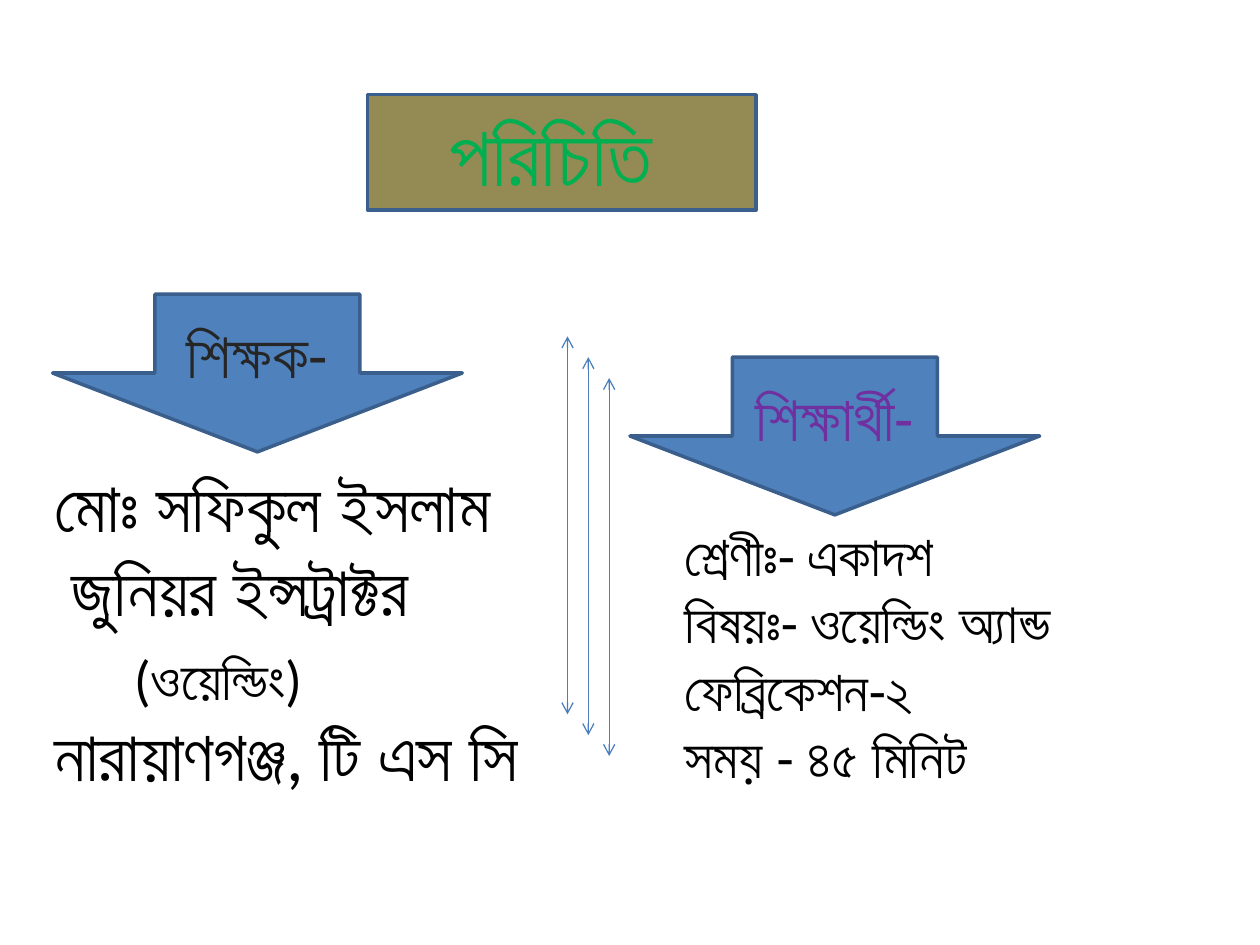
from lxml import etree
from pptx import Presentation
from pptx import util as u
from pptx.dml.color import RGBColor
from pptx.enum import shapes, text
from pptx.oxml.ns import qn

FONT = "Calibri"
OLIVE = RGBColor(0x94, 0x8A, 0x54)
BLUE = RGBColor(0x4F, 0x81, 0xBD)
OUTLINE = RGBColor(0x3A, 0x5F, 0x8C)
DIVIDER = RGBColor(0x4B, 0x7E, 0xBC)
GREEN = RGBColor(0x00, 0xB0, 0x50)
PURPLE = RGBColor(0x70, 0x30, 0xA0)
CHARCOAL = RGBColor(0x26, 0x26, 0x26)
BLACK = RGBColor(0, 0, 0)

# Bengali letter YYA: letter YA plus the nukta sign, and the single code point
YA_WITH_NUKTA = chr(0x09AF) + chr(0x09BC)
YYA = chr(0x09DF)


def cm_box(box):
    return [u.Cm(length) for length in box]


def add_words(paragraph, words, size, color):
    """Add words in one format, YYA as one code point; a newline breaks the line."""
    for index, line in enumerate(words.replace(YA_WITH_NUKTA, YYA).split("\n")):
        if index:
            paragraph.add_line_break()
        if not line:
            continue
        run = paragraph.add_run()
        run.text = line
        run.font.color.rgb = color
        for name, value in {"name": FONT, "size": u.Pt(size)}.items():
            setattr(run.font, name, value)


def add_banner(slide, box, kind, fill, words, size, color):
    banner = slide.shapes.add_shape(kind, *cm_box(box))
    banner.shadow.inherit = False
    banner.fill.solid()
    banner.fill.fore_color.rgb = fill
    banner.line.color.rgb = OUTLINE
    banner.line.width = u.Pt(2)
    frame = banner.text_frame
    frame.vertical_anchor = text.MSO_ANCHOR.MIDDLE
    frame.paragraphs[0].alignment = text.PP_ALIGN.CENTER
    add_words(frame.paragraphs[0], words, size, color)


def add_details(slide, box, paragraphs):
    """Each paragraph is a list of (words, size) parts."""
    frame = slide.shapes.add_textbox(*cm_box(box)).text_frame
    frame.word_wrap = True
    frame.auto_size = text.MSO_AUTO_SIZE.SHAPE_TO_FIT_TEXT
    for index, parts in enumerate(paragraphs):
        paragraph = frame.add_paragraph() if index else frame.paragraphs[0]
        for words, size in parts:
            add_words(paragraph, words, size, BLACK)
    return frame


def add_teacher(slide, left, top):
    add_banner(slide, (left + 0.21, top, 8.26, 3.18), shapes.MSO_SHAPE.DOWN_ARROW,
               BLUE, "শিক্ষক-", 36, CHARCOAL)
    frame = add_details(slide, (left, top + 3.27, 10.37, 7.09), [
        [("মোঃ সফিকুল ইসলাম \n জুনিয়র ইন্সট্রাক্টর", 40)],
        [("(ওয়েল্ডিং)\n", 32), ("নারায়াণগঞ্জ, টি এস সি", 40)],
    ])
    workplace = frame.paragraphs[1]
    workplace.space_before = u.Pt(8)
    workplace._p.get_or_add_pPr().set("indent", str(u.Cm(1.6)))


def add_student(slide, left, top):
    add_banner(slide, (left, top, 8.26, 3.18), shapes.MSO_SHAPE.DOWN_ARROW,
               BLUE, "শিক্ষার্থী-", 36, PURPLE)
    lines = ("শ্রেণীঃ- একাদশ", "বিষয়ঃ- ওয়েল্ডিং অ্যান্ড ফেব্রিকেশন-২", "সময় - ৪৫ মিনিট")
    add_details(slide, (left + 0.85, top + 3.17, 8.89, 5.82),
                [[(line, 32)] for line in lines])


def add_dividers(slide, left, top, length, step, count=3):
    """Draw double-headed vertical lines, each one step right and down."""
    for index in range(count):
        x, y = left + index * step, top + index * step
        divider = slide.shapes.add_connector(
            shapes.MSO_CONNECTOR.STRAIGHT, *cm_box((x, y, x, y + length)))
        divider.line.color.rgb = DIVIDER
        divider.line.width = u.Pt(0.75)
        outline = divider.line._get_or_add_ln()
        for end in ("a:headEnd", "a:tailEnd"):
            etree.SubElement(outline, qn(end), type="arrow")
        etree.SubElement(divider._element.spPr, qn("a:effectLst"))


def main():
    deck = Presentation()
    deck.slide_width, deck.slide_height = u.Cm(25.4), u.Cm(19.05)
    slide = deck.slides.add_slide(deck.slide_layouts[6])
    add_banner(slide, (7.41, 1.91, 7.83, 2.33), shapes.MSO_SHAPE.RECTANGLE,
               OLIVE, "পরিচিতি ", 48, GREEN)
    add_dividers(slide, 11.44, 6.78, 7.62, 0.42)
    add_student(slide, 12.7, 7.2)
    add_teacher(slide, 0.85, 5.93)
    deck.save("out.pptx")


if __name__ == "__main__":
    main()
